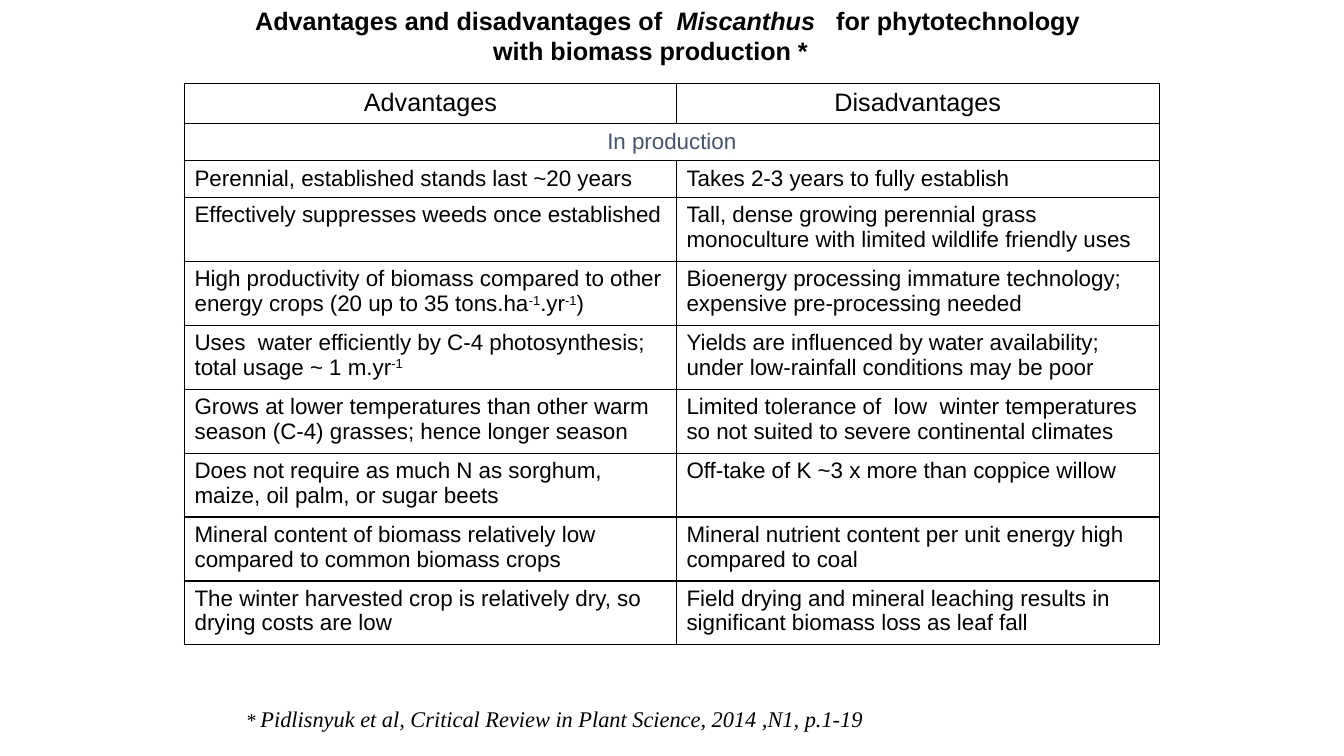
"""Build the slide on advantages and disadvantages of Miscanthus."""
import pptx
import pptx.util
import pptx.dml.color
import pptx.enum.text
import pptx.oxml
import pptx.oxml.ns

Pt = pptx.util.Pt
ALIGN = pptx.enum.text.PP_ALIGN

COLOURS = {"ink": "000000", "section": "44546A"}
TITLE = [
    [("Advantages and disadvantages of  ", False), ("Miscanthus  ", True),
     (" for phytotechnology", False)],
    [("with biomass production *", False)],
]
TITLE_INDENT = 24
HEADINGS = ("Advantages", "Disadvantages")
SECTION = "In production"
POINTS = [
    ("Perennial, established stands last ~20 years",
     "Takes 2-3 years to fully establish"),
    ("Effectively suppresses weeds once established",
     "Tall, dense growing perennial grass monoculture with limited wildlife friendly uses"),
    ("High productivity of biomass compared to other energy crops "
     "(20 up to 35 tons.ha^-1^.yr^-1^)",
     "Bioenergy processing immature technology; expensive pre-processing needed"),
    ("Uses  water efficiently by C-4 photosynthesis; total usage ~ 1 m.yr^-1",
     "Yields are influenced by water availability; under low-rainfall conditions may be poor"),
    ("Grows at lower temperatures than other warm season (C-4) grasses; hence longer season",
     "Limited tolerance of  low  winter temperatures so not suited to severe "
     "continental climates"),
    ("Does not require as much N as sorghum, maize, oil palm, or sugar beets",
     "Off-take of K ~3 x more than coppice willow"),
    ("Mineral content of biomass relatively low compared to common biomass crops",
     "Mineral nutrient content per unit energy high compared to coal"),
    ("The winter harvested crop is relatively dry, so drying costs are low",
     "Field drying and mineral leaching results in significant biomass loss as leaf fall"),
]
SOURCE = [("* ", 14),
          ("Pidlisnyuk et al, Critical Review in Plant Science, 2014 ,N1, p.1-19", 16)]
COLUMN_WIDTHS = (351.4, 344.8)
ROW_HEIGHTS = [28.8, 26.4, 26.4] + [45.6] * (len(POINTS) - 1)


def style(run, size, face="Arial", colour="ink", bold=False, italic=False):
    font = run.font
    font.size, font.name, font.bold, font.italic = Pt(size), face, bold, italic
    font.color.rgb = pptx.dml.color.RGBColor.from_string(COLOURS[colour])


def add_text_box(slide, left, top, width, height):
    frame = slide.shapes.add_textbox(Pt(left), Pt(top), Pt(width), Pt(height)).text_frame
    frame.word_wrap = True
    return frame


def add_borders(cell):
    properties = cell._tc.get_or_add_tcPr()
    for index, side in enumerate("LRTB"):
        properties.insert(index, pptx.oxml.parse_xml(
            f'<a:ln{side} {pptx.oxml.ns.nsdecls("a")} w="{Pt(1)}"><a:solidFill>'
            f'<a:srgbClr val="{COLOURS["ink"]}"/></a:solidFill></a:ln{side}>'))


def fill_cell(cell, text, size=16, colour="ink", align=ALIGN.LEFT):
    paragraph = cell.text_frame.paragraphs[0]
    paragraph.alignment = align
    for index, part in enumerate(text.split("^")):
        if part:
            run = paragraph.add_run()
            run.text = part
            style(run, size, colour=colour)
            if index % 2:
                run._r.get_or_add_rPr().set("baseline", "30000")


def add_title(slide):
    frame = add_text_box(slide, 150.5, 0, 628.6, 48)
    frame.margin_left = frame.margin_right = 0
    for index, line in enumerate(TITLE):
        paragraph = frame.add_paragraph() if index else frame.paragraphs[0]
        paragraph.alignment = ALIGN.CENTER
        for text, italic in line:
            run = paragraph.add_run()
            run.text = text
            style(run, 18, bold=True, italic=italic)
    frame.paragraphs[0]._p.get_or_add_pPr().set("marL", str(Pt(TITLE_INDENT)))


def add_comparison(slide):
    comparison = slide.shapes.add_table(
        len(ROW_HEIGHTS), len(COLUMN_WIDTHS), Pt(131.8), Pt(59.6),
        Pt(sum(COLUMN_WIDTHS)), Pt(sum(ROW_HEIGHTS))).table
    comparison.first_row = comparison.horz_banding = False
    for column, width in zip(comparison.columns, COLUMN_WIDTHS):
        column.width = Pt(width)
    for row, height in zip(comparison.rows, ROW_HEIGHTS):
        row.height = Pt(height)
    for cell in comparison.iter_cells():
        cell.fill.background()
        add_borders(cell)
    comparison.cell(1, 0).merge(comparison.cell(1, 1))
    fill_cell(comparison.cell(1, 0), SECTION, colour="section", align=ALIGN.CENTER)
    for column, heading in enumerate(HEADINGS):
        fill_cell(comparison.cell(0, column), heading, size=18, align=ALIGN.CENTER)
    for row, pair in enumerate(POINTS, start=2):
        for column, point in enumerate(pair):
            fill_cell(comparison.cell(row, column), point)


def add_source(slide):
    paragraph = add_text_box(slide, 168.5, 500.4, 465.8, 26.6).paragraphs[0]
    for text, size in SOURCE:
        run = paragraph.add_run()
        run.text = text
        style(run, size, face="Times New Roman", italic=True)


def main():
    deck = pptx.Presentation()
    deck.slide_width, deck.slide_height = Pt(960), Pt(540)
    slide = deck.slides.add_slide(deck.slide_layouts[6])
    add_title(slide)
    add_comparison(slide)
    add_source(slide)
    deck.save("out.pptx")


if __name__ == "__main__":
    main()
